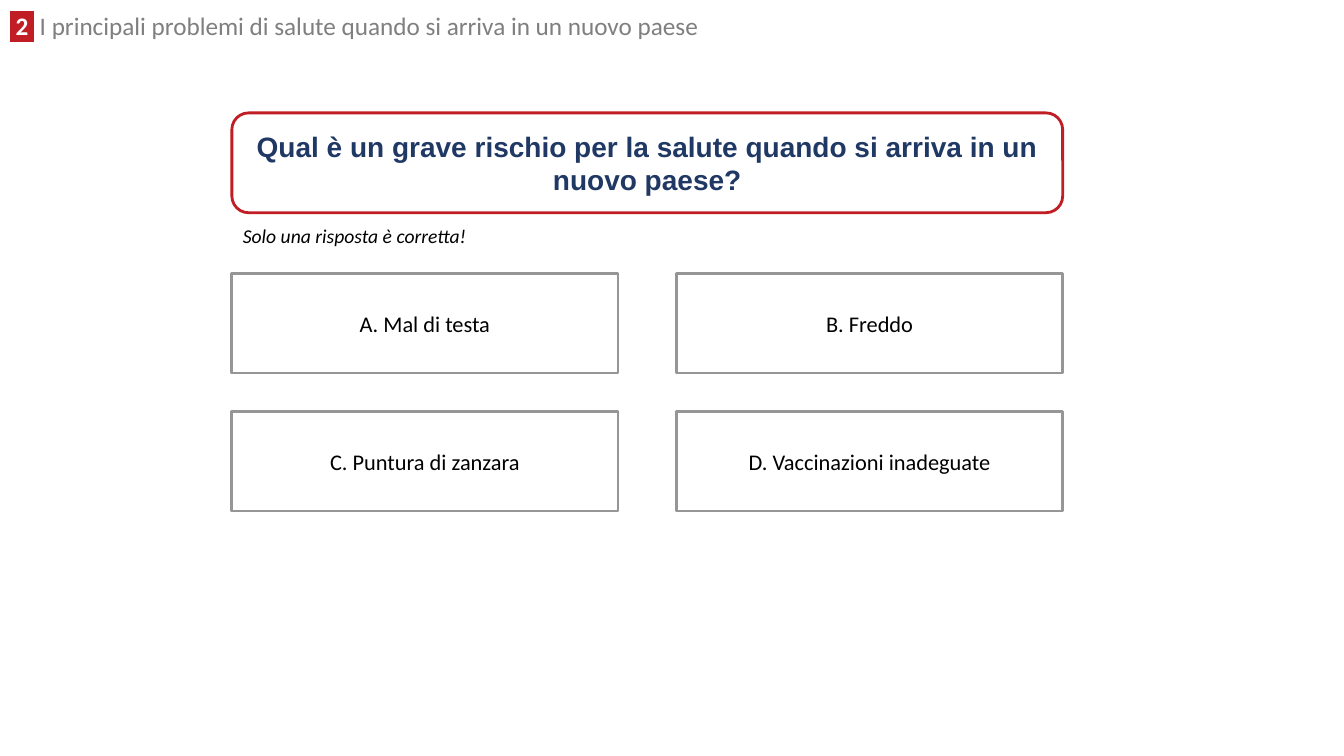
from lxml import etree
from pptx import Presentation
from pptx.dml.color import RGBColor
from pptx.enum.shapes import MSO_SHAPE
from pptx.enum.text import MSO_ANCHOR, MSO_AUTO_SIZE, PP_ALIGN
from pptx.oxml.ns import qn
from pptx.util import Inches, Pt

RECTANGLE = MSO_SHAPE.RECTANGLE
ROUNDED = MSO_SHAPE.ROUNDED_RECTANGLE
MIDDLE = MSO_ANCHOR.MIDDLE
FIT_SHAPE = MSO_AUTO_SIZE.SHAPE_TO_FIT_TEXT
CENTER = PP_ALIGN.CENTER

WHITE = RGBColor(0xFF, 0xFF, 0xFF)
BLACK = RGBColor(0x00, 0x00, 0x00)
RED = RGBColor(0xC0, 0x1E, 0x24)
NAVY = RGBColor(0x20, 0x38, 0x64)
TITLE_GRAY = RGBColor(0x7F, 0x7F, 0x7F)
BORDER_GRAY = RGBColor(0x96, 0x96, 0x96)

LEFT = 2.3
ANSWER_TOP = 2.71
ANSWER_WIDTH = 3.83
BOX_HEIGHT = 0.99
COLUMN_STEP = 4.41
ROW_STEP = 1.37
ANSWERS = ["A. Mal di testa", "B. Freddo", "C. Puntura di zanzara", "D. Vaccinazioni inadeguate"]


def add_span(para, text, size, color, font="Calibri", bold=False, italic=False):
    """Append a formatted run to a paragraph."""
    span = para.add_run()
    span.text = text
    span.font.size = Pt(size)
    span.font.name = font
    span.font.bold = bold
    span.font.italic = italic
    span.font.color.rgb = color
    return span


def highlight(span, color):
    """Give a coloured run a background colour."""
    mark = etree.Element(qn("a:highlight"))
    etree.SubElement(mark, qn("a:srgbClr"), val=str(color))
    span.font.fill  
    properties = span.font.color and span._r.get_or_add_rPr()
    properties.find(qn("a:solidFill")).addnext(mark)


def add_label(page, left, top, width, height):
    """Add a wrapping text box and return its first paragraph."""
    box = page.shapes.add_textbox(Inches(left), Inches(top), Inches(width), Inches(height))
    box.text_frame.word_wrap = True
    box.text_frame.auto_size = FIT_SHAPE
    return box.text_frame.paragraphs[0]


def add_box(page, shape_type, left, top, width, border):
    """Add a white outlined box and return its centred paragraph."""
    box = page.shapes.add_shape(
        shape_type, Inches(left), Inches(top), Inches(width), Inches(BOX_HEIGHT))
    box.shadow.inherit = False
    box.fill.solid()
    box.fill.fore_color.rgb = WHITE
    box.line.color.rgb = border
    box.line.width = Pt(2)
    box.text_frame.word_wrap = True
    box.text_frame.vertical_anchor = MIDDLE
    para = box.text_frame.paragraphs[0]
    para.alignment = CENTER
    return para


def add_title(page):
    """Add the numbered section title."""
    para = add_label(page, 0, 0.11, 8.54, 0.34)
    para.line_spacing = 0.8
    number = add_span(para, " 2 ", 18, WHITE, bold=True)
    highlight(number, RED)
    add_span(para, " I principali problemi di salute quando si arriva in un nuovo paese",
             18, TITLE_GRAY)


def add_question(page):
    """Add the question and its hint."""
    question = add_box(page, ROUNDED, LEFT, 1.12, COLUMN_STEP + ANSWER_WIDTH, RED)
    add_span(question, "Qual è un grave rischio per la salute quando si arriva in un nuovo paese?",
             20, NAVY, font="Arial", bold=True)
    hint = add_label(page, 2.31, 2.17, 2.93, 0.34)
    add_span(hint, "Solo una risposta è corretta!", 14, BLACK, italic=True)


def add_answers(page):
    """Lay out the answers in two columns."""
    for index, answer in enumerate(ANSWERS):
        row, column = divmod(index, 2)
        para = add_box(page, RECTANGLE, LEFT + column * COLUMN_STEP,
                       ANSWER_TOP + row * ROW_STEP, ANSWER_WIDTH, BORDER_GRAY)
        add_span(para, answer, 16, BLACK)


def main():
    """Build and save the quiz slide."""
    deck = Presentation()
    deck.slide_width = Inches(13.33)
    deck.slide_height = Inches(7.5)
    page = deck.slides.add_slide(deck.slide_layouts[6])
    add_title(page)
    add_question(page)
    add_answers(page)
    deck.save("out.pptx")


if __name__ == "__main__":
    main()
